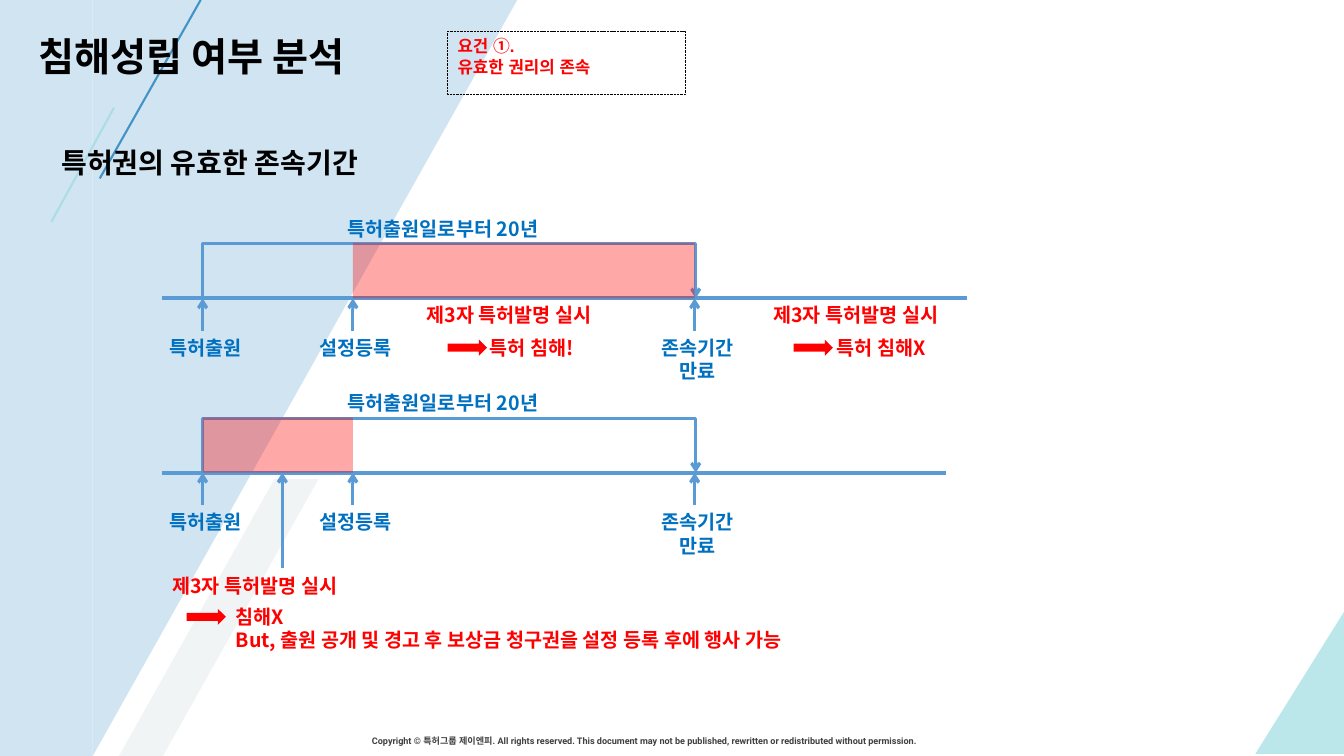
from pptx import Presentation
from pptx.dml.color import RGBColor
from pptx.enum.dml import MSO_LINE
from pptx.enum.shapes import MSO_CONNECTOR, MSO_SHAPE
from pptx.enum.text import MSO_ANCHOR, PP_ALIGN
from pptx.oxml.ns import qn
from pptx.util import Inches, Pt
from lxml.etree import SubElement

FONT = "Noto Sans CJK KR"
BLUE, RED, BLACK, LINE = "0070C0", "FF0000", "000000", "5B9BD5"
NAVY, MINT, GREY = "016DB2", "98DBE0", "F0F4F5"

TITLE = "침해성립 여부 분석"
HEAD = "특허권의 유효한 존속기간"
NOTE = "요건 ①.\n유효한 권리의 존속"
TERM = "특허출원일로부터 20년"
ACT = "제3자 특허발명 실시"
RIGHTS = "Copyright © 특허그룹 제이엔피. All rights reserved. This document may not be published, rewritten or redistributed without permission."

START, GRANT, END = 2.01, 3.5, 6.89
STEPS = [(START, "특허출원"), (GRANT, "설정등록"), (END, "존속기간\n만료")]
ROWS = [
    {"y": 2.96, "right": 9.59, "band": (GRANT, END)},
    {"y": 4.69, "right": 9.38, "band": (START, GRANT)},
]
CASES = [
    (4.13, 2.96, 4.44, 4.76, 3.28, 1.12, "특허 침해!"),
    (7.57, 2.96, 7.87, 8.2, 3.28, 1.18, "특허 침해X"),
    (1.61, 5.64, 1.85, 2.24, 5.95, 6.3,
     "침해X\nBut, 출원 공개 및 경고 후 보상금 청구권을 설정 등록 후에 행사 가능"),
]

deck = Presentation()
deck.slide_width, deck.slide_height = Inches(13.33), Inches(7.5)
slide = deck.slides.add_slide(deck.slide_layouts[5])
shapes = slide.shapes


def paint(fmt, color, alpha=100):
    fmt.solid()
    fmt.fore_color.rgb = RGBColor.from_string(color)
    if alpha < 100:
        node = fmt._xPr.find(qn("a:solidFill"))[0]
        SubElement(node, qn("a:alpha")).set("val", str(alpha * 1000))


def stroke(shape, color, width, alpha=100, arrow=False):
    shape.line.width = Pt(width)
    paint(shape.line.fill, color, alpha)
    if arrow:
        SubElement(shape.line._ln, qn("a:tailEnd")).set("type", "arrow")


def block(kind, x, y, w, h, color, alpha=100, flip=None):
    shape = shapes.add_shape(kind, Inches(x), Inches(y), Inches(w), Inches(h))
    shape.shadow.inherit = False
    paint(shape.fill, color, alpha)
    shape.line.fill.background()
    if flip:
        shape._element.spPr.find(qn("a:xfrm")).set(flip, "1")
    return shape


def link(x, y, to_x, to_y, color=LINE, width=2.25, alpha=100, arrow=False):
    line = shapes.add_connector(MSO_CONNECTOR.STRAIGHT, Inches(x), Inches(y),
                                Inches(to_x), Inches(to_y))
    stroke(line, color, width, alpha, arrow)
    SubElement(line._element.spPr, qn("a:effectLst"))


def style(frame, text, size, color, font=FONT, align=PP_ALIGN.LEFT):
    frame.text = text
    frame.vertical_anchor = MSO_ANCHOR.TOP
    for para in frame.paragraphs:
        para.alignment = align
        for run in para.runs:
            run.font.size, run.font.bold, run.font.name = Pt(size), True, font
            run.font.color.rgb = RGBColor.from_string(color)
            SubElement(run._r.get_or_add_rPr(), qn("a:ea")).set("typeface", font)


def label(x, y, w, h, text, size=14, color=BLUE, font=FONT,
          align=PP_ALIGN.LEFT, wrap=False):
    box = shapes.add_textbox(Inches(x), Inches(y), Inches(w), Inches(h))
    box.text_frame.word_wrap = wrap
    style(box.text_frame, text, size, color, font, align)


def tall(text):
    return 0.57 if "\n" in text else 0.34


def backdrop():
    block(MSO_SHAPE.RECTANGLE, 0, 0, 0.92, 7.5, NAVY, 18)
    block(MSO_SHAPE.RIGHT_TRIANGLE, 0.92, 0, 4.21, 7.5, NAVY, 18, "flipV")
    stripe = block(MSO_SHAPE.PARALLELOGRAM, 1.18, 4.75, 1.98, 2.75, GREY)
    stripe.adjustments[0] = 0.78
    block(MSO_SHAPE.RIGHT_TRIANGLE, 12.45, 6.07, 0.88, 1.41, MINT, 65, "flipH")
    link(1.99, 0, 0.99, 1.77, NAVY, 1.5, 67)
    link(1.13, 1.07, 0.51, 2.2, MINT, 1.5, 67)
    label(3.59, 7.25, 8.29, 0.21, RIGHTS, 6.5, "404040", "Roboto", wrap=True)


def bracket(y):
    top = y - 0.54
    pen = shapes.build_freeform(Inches(START), Inches(y))
    pen.add_line_segments([(Inches(a), Inches(b)) for a, b in
                           [(START, top), (END + 0.01, top), (END + 0.01, y)]],
                          close=False)
    path = pen.convert_to_shape()
    path.shadow.inherit = False
    path.fill.background()
    stroke(path, LINE, 2.25, arrow=True)


def timeline(y, right, band):
    link(1.61, y, right, y, width=3)
    for x, text in STEPS:
        link(x, y + 0.32, x, y, arrow=True)
        label(x - 0.47, y + 0.32, 0.99, tall(text), text, align=PP_ALIGN.CENTER)
    bracket(y)
    label(3.35, y - 0.86, 2.27, 0.34, TERM)
    left, stop = band
    block(MSO_SHAPE.RECTANGLE, left, y - 0.55, stop - left, 0.55, RED, 34)


backdrop()
label(0.51, 1.39, 3.5, 0.44, HEAD, 20, BLACK)
for row in ROWS:
    timeline(**row)
link(2.8, 5.64, 2.8, 4.69, arrow=True)

for x, y, tip, left, top, wide, text in CASES:
    label(x, y, 2.02, 0.34, ACT, color=RED)
    block(MSO_SHAPE.RIGHT_ARROW, tip, top + 0.09, 0.39, 0.16, RED)
    label(left, top, wide, tall(text), text, color=RED)

note = block(MSO_SHAPE.RECTANGLE, 4.44, 0.31, 2.36, 0.63, RED)
note.fill.background()
stroke(note, BLACK, 0.25)
note.line.dash_style = MSO_LINE.SQUARE_DOT
style(note.text_frame, NOTE, 12, RED, "Arial")

title = shapes.title
title.left, title.top = Inches(0.28), Inches(0.27)
title.width, title.height = Inches(11.6), Inches(0.57)
style(title.text_frame, TITLE, 28, BLACK)
shapes._spTree.append(title._element)

deck.save("out.pptx")
